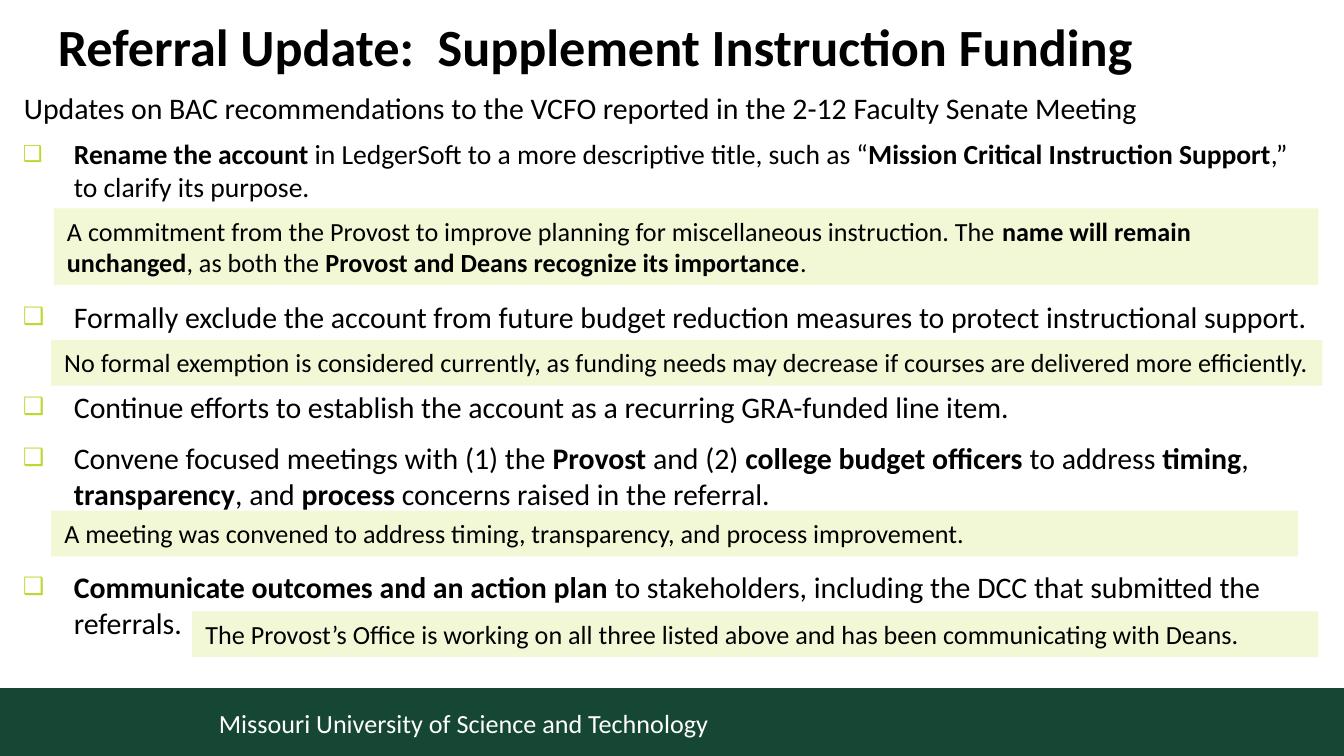
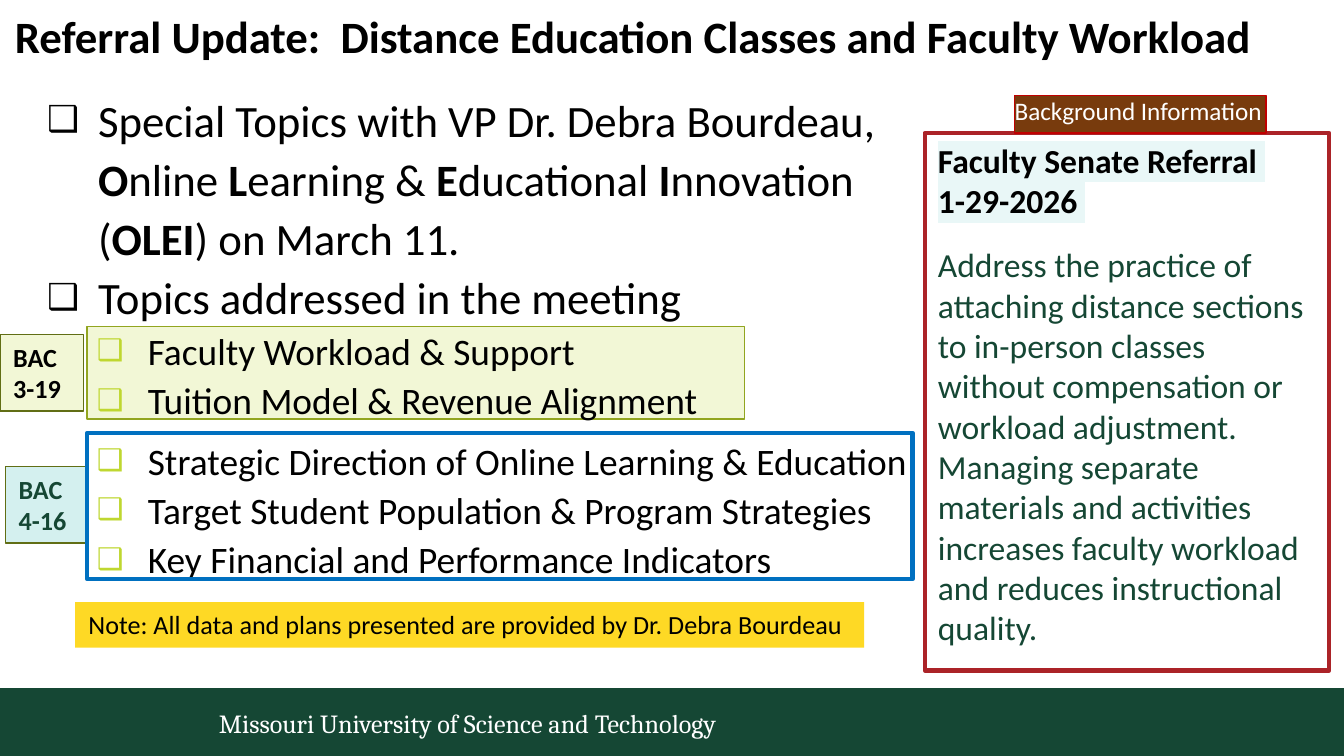
"""Build two referral update slides for a faculty senate committee."""
from lxml import etree
from pptx import Presentation
from pptx.dml.color import RGBColor
from pptx.enum.shapes import MSO_SHAPE
from pptx.enum.text import MSO_ANCHOR, MSO_AUTO_SIZE, PP_ALIGN
from pptx.oxml.ns import qn
from pptx.util import Inches, Pt

BLACK, WHITE, FOREST = "000000", "FFFFFF", "154734"
PALE_LIME, LIME, OLIVE = "F2F7D6", "BFD730", "616E15"
INSET = (0.1, 0.05, 0.1, 0.05)
FLUSH = (0, 0, 0, 0)


def rgb(value):
    return RGBColor.from_string(value)


class Deck:
    def __init__(self):
        self.presentation = Presentation()
        self.presentation.slide_width = Inches(10)
        self.presentation.slide_height = Inches(10 * 9 / 16)
        self.slide = None

    def new_slide(self, title, title_at, title_size, footer_font):
        layout = self.presentation.slide_layouts[1]
        self.slide = self.presentation.slides.add_slide(layout)
        self.panel((0, 5.12, 10, 0.51), FOREST)
        heading = self.placeholder(self.slide.shapes.title, title_at)
        self.paragraph(heading, f"**{title}**", title_size, spacing=0.9)
        self.text((1.53, 5.18, 6.35, 0.4), "Missouri University of Science and Technology",
                  14, color=WHITE, font=footer_font, anchor=MSO_ANCHOR.MIDDLE)

    def placeholder(self, holder, at):
        holder.left, holder.top, holder.width, holder.height = map(Inches, at)
        self.slide.shapes.element.append(holder.element)
        return self.frame(holder, FLUSH)

    def body(self, at):
        return self.placeholder(self.slide.placeholders[1], at)

    def frame(self, shape, inset=INSET, anchor=MSO_ANCHOR.TOP, wrap=True):
        frame = shape.text_frame
        frame.word_wrap = wrap
        frame.auto_size = MSO_AUTO_SIZE.NONE
        frame.vertical_anchor = anchor
        (frame.margin_left, frame.margin_top,
         frame.margin_right, frame.margin_bottom) = map(Inches, inset)
        return frame

    def paragraph(self, frame, marked, size, color=BLACK, font="Calibri", spacing=1.0,
                  before=0, after=0, bullet=None, level=0, indent=0.38, highlight=None):
        paragraph = frame.paragraphs[0]
        if paragraph.runs:
            paragraph = frame.add_paragraph()
        if bullet:
            self.bullet(paragraph, bullet, indent)
        paragraph.level = level
        paragraph.alignment = PP_ALIGN.LEFT
        paragraph.line_spacing = spacing
        paragraph.space_before, paragraph.space_after = Pt(before), Pt(after)
        for position, words in enumerate(marked.split("**")):
            if not words:
                continue
            run = paragraph.add_run()
            run.text = words
            run.font.size = Pt(size)
            run.font.bold = position % 2 == 1
            run.font.color.rgb = rgb(color)
            if highlight:
                mark = etree.SubElement(run.font._element, qn("a:highlight"))
                etree.SubElement(mark, qn("a:srgbClr"), val=highlight)
            run.font.name = font

    def bullet(self, paragraph, color, indent):
        properties = paragraph._p.get_or_add_pPr()
        properties.set("marL", str(Inches(indent)))
        properties.set("indent", str(-Inches(0.38)))
        tint = etree.SubElement(properties, qn("a:buClr"))
        etree.SubElement(tint, qn("a:srgbClr"), val=color)
        etree.SubElement(properties, qn("a:buSzPct"), val="80000")
        etree.SubElement(properties, qn("a:buFont"), typeface="Arial")
        etree.SubElement(properties, qn("a:buChar"), char="❑")

    def text_box(self, at, inset=INSET, anchor=MSO_ANCHOR.TOP):
        return self.frame(self.slide.shapes.add_textbox(*map(Inches, at)), inset, anchor)

    def text(self, at, marked, size, anchor=MSO_ANCHOR.TOP, **style):
        self.paragraph(self.text_box(at, anchor=anchor), marked, size, **style)

    def panel(self, at, fill=None, line=None, width=0.75, marked="", size=14,
              color=BLACK, inset=INSET):
        shape = self.slide.shapes.add_shape(MSO_SHAPE.RECTANGLE, *map(Inches, at))
        shape.shadow.inherit = False
        if fill:
            shape.fill.solid()
            shape.fill.fore_color.rgb = rgb(fill)
        else:
            shape.fill.background()
        if line:
            shape.line.color.rgb = rgb(line)
            shape.line.width = Pt(width)
        else:
            shape.line.fill.background()
        if marked:
            self.paragraph(self.frame(shape, inset), marked, size, color)


def funding_slide(deck):
    deck.new_slide("Referral Update:  Supplement Instruction Funding",
                   (0.43, 0.16, 9.14, 0.64), 28, "Calibri")
    deck.text((0.08, 0.59, 9.58, 0.38),
              "Updates on BAC recommendations to the VCFO reported in the 2-12 Faculty Senate Meeting",
              16, spacing=1.1)
    rename = deck.body((-0.07, 1.02, 9.84, 0.52))
    deck.paragraph(rename, "**Rename the account **in LedgerSoft to a more descriptive title, such as "
                   "“**Mission Critical Instruction Support**,” to clarify its purpose.",
                   14.8, bullet=LIME, level=1, indent=0.62)
    recommendations = [
        ((-0.07, 2.22, 9.87, 0.32),
         "Formally exclude the account from future budget reduction measures "
         "to protect instructional support."),
        ((-0.07, 2.89, 9.42, 0.32),
         "Continue efforts to establish the account as a recurring GRA-funded line item."),
        ((-0.07, 3.27, 9.84, 0.55),
         "Convene focused meetings with (1) the **Provost** and (2) **college budget "
         "officers **to address **timing**, **transparency**, and **process** concerns raised "
         "in the referral."),
        ((-0.07, 4.23, 9.84, 0.55),
         "**Communicate outcomes and an action plan **to stakeholders, including the "
         "DCC that submitted the referrals."),
    ]
    for at, recommendation in recommendations:
        deck.paragraph(deck.text_box(at, FLUSH), recommendation,
                       16, bullet=LIME, level=1, indent=0.62)
    responses = [
        ((0.4, 1.55, 9.41, 0.57),
         "A commitment from the Provost to improve planning for miscellaneous instruction. The "
         "**name will remain unchanged**, as both the **Provost and Deans recognize its "
         "importance**."),
        ((0.38, 2.53, 9.46, 0.34),
         "No formal exemption is considered currently, as funding needs may decrease if courses "
         "are delivered more efficiently."),
        ((0.38, 3.8, 9.28, 0.34),
         "A meeting was convened to address timing, transparency, and process improvement."),
        ((1.43, 4.55, 8.38, 0.34),
         "The Provost’s Office is working on all three listed above and has been communicating "
         "with Deans."),
    ]
    for at, response in responses:
        deck.panel(at, PALE_LIME, marked=response, inset=(0.1, 0.05, 0.05, 0.05))


def workload_slide(deck):
    deck.new_slide("Referral Update:  Distance Education Classes and Faculty Workload",
                   (0.11, 0.11, 9.67, 0.44), 24, "Cambria")
    deck.panel((0.65, 2.43, 4.89, 0.69), PALE_LIME, "92A520", 1)

    referral = deck.text_box((6.88, 0.99, 3.01, 3.91))
    for heading in ("Faculty Senate Referral ", "1-29-2026 "):
        deck.paragraph(referral, f"**{heading}**", 18, highlight="E9F7F7")
    deck.paragraph(referral, "Address the practice of attaching distance sections to in-person "
                   "classes without compensation or workload adjustment. Managing separate "
                   "materials and activities increases faculty workload and reduces "
                   "instructional quality.", 18, FOREST, before=12.8)
    deck.panel((6.88, 0.99, 3.01, 4), line="AB2328", width=2.25)
    deck.panel((7.55, 0.71, 1.87, 0.28), "783B0D", "C00000", marked="Background Information",
               size=13.5, color=WHITE, inset=(0, 0, 0, 0.05))

    agenda = deck.body((0.35, 0.65, 6.44, 3.85))
    for point in ("Special Topics with VP Dr. Debra Bourdeau, **O**nline **L**earning & "
                  "**E**ducational **I**nnovation (**OLEI**) on March 11.",
                  "Topics addressed in the meeting"):
        deck.paragraph(agenda, point, 24, spacing=1.1, bullet=BLACK)
    topics = [
        ("Faculty Workload & Support", 0),
        ("Tuition Model & Revenue Alignment", 6),
        ("Strategic Direction of Online Learning & Education", 0),
        ("Target Student Population & Program Strategies", 0),
        ("Key Financial and Performance Indicators", 0),
    ]
    for topic, after in topics:
        deck.paragraph(agenda, topic, 20, spacing=1.1, after=after, bullet=LIME,
                       level=1, indent=0.75)

    deck.panel((0, 2.49, 0.62, 0.57), PALE_LIME, OLIVE, marked="**BAC 3-19**")
    deck.panel((0.04, 3.47, 0.6, 0.57), "D4F0EF", OLIVE, marked="**BAC 4-16**", color=FOREST)
    deck.panel((0.56, 4.48, 5.87, 0.34), "FED925",
               marked="Note: All data and plans presented are provided by Dr. Debra Bourdeau")
    deck.panel((0.65, 3.22, 6.14, 1.09), line="0070C0", width=2.25)


def main():
    deck = Deck()
    funding_slide(deck)
    workload_slide(deck)
    deck.presentation.save("out.pptx")


if __name__ == "__main__":
    main()
